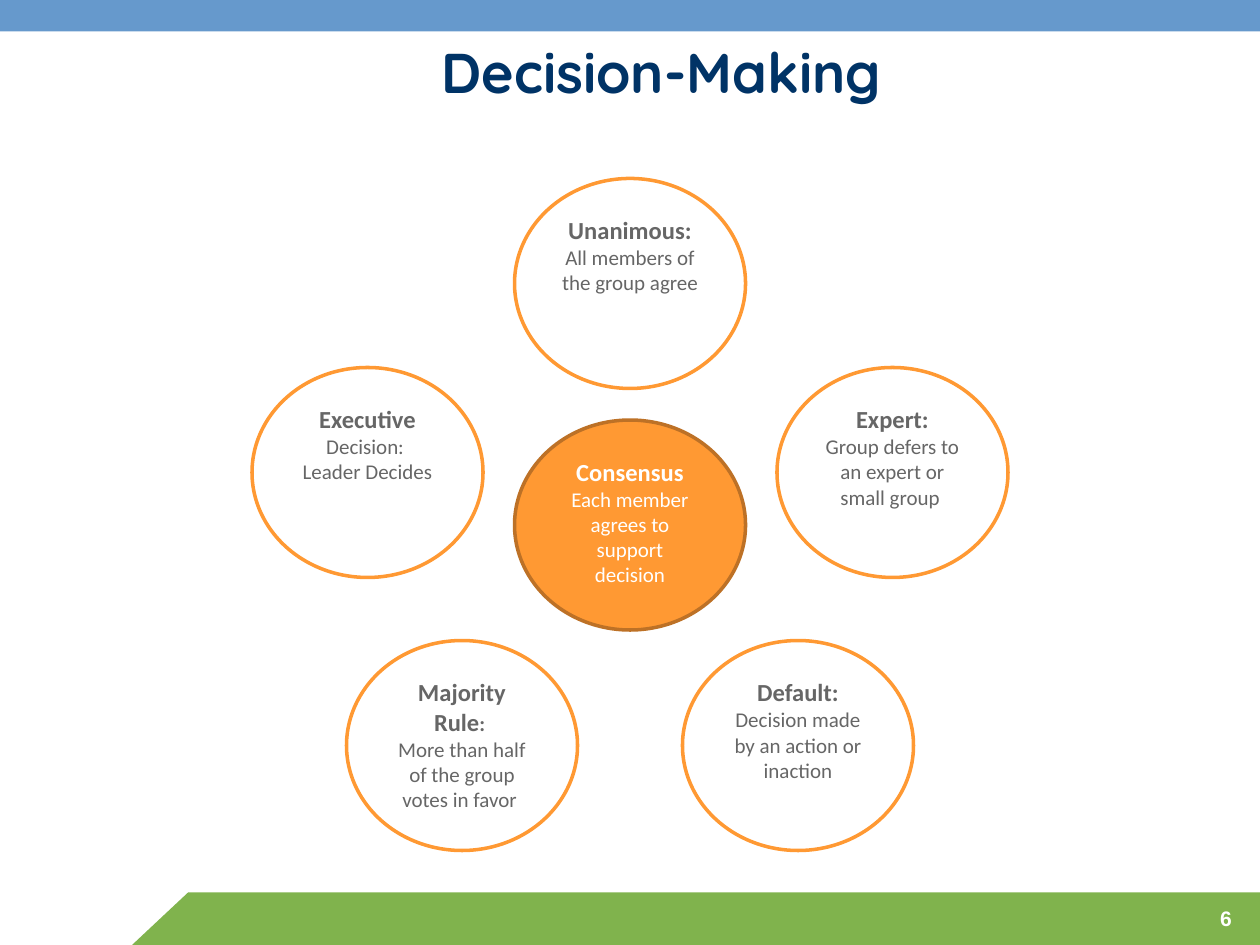
from lxml import etree
from pptx import Presentation
from pptx import util as u
from pptx.dml.color import RGBColor
from pptx.enum import shapes, text
from pptx.oxml import ns

WIDTH, HEIGHT = 720, 540
GREEN, BLUE, NAVY = "80B34D", "6699CC", "003366"
ORANGE, BROWN, GRAY, WHITE = "FF9933", "BD7126", "666666", "FFFFFF"
CENTER, RIGHT = text.PP_ALIGN.CENTER, text.PP_ALIGN.RIGHT
OVAL_W, OVAL_H = 132, 120

# Left, top, then paragraphs of (text, size, bold) runs
CHOICES = [
    (294, 102, [[("Unanimous:", 14, True)],
                [("All members of the group agree ", 12, False)]]),
    (144, 210, [[("Executive", 14, True), (" ", 12, True), ("Decision: ", 12, False)],
                [("Leader Decides", 12, False)]]),
    (390, 366, [[("Default:", 14, True)],
                [("Decision made by an action or inaction", 12, False)]]),
    (198, 366, [[("Majority Rule", 14, True), (": ", 12, True)],
                [("More than half of the group votes in favor ", 12, False)]]),
    (444, 210, [[("Expert:", 14, True)],
                [("Group defers to an expert or small group ", 12, False)]]),
]
CONSENSUS = [[("Consensus", 14, True)],
             [("Each member agrees to support decision", 12, False)]]


def rgb(value):
    return RGBColor.from_string(value)


class Deck:
    font = "Calibri"
    line_width = 2

    def __init__(self, s):
        self.s = s

    def shape(self, kind, box, fill, line=None):
        sp = self.s.shapes.add_shape(kind, *map(u.Pt, box))
        sp.shadow.inherit = False
        sp.fill.solid()
        sp.fill.fore_color.rgb = rgb(fill)
        if line:
            sp.line.color.rgb = rgb(line)
            sp.line.width = u.Pt(self.line_width)
        else:
            sp.line.fill.background()
        return sp

    def style(self, r, size, bold, color, font):
        r.font.size = u.Pt(size)
        r.font.bold = bold
        r.font.name = font
        r.font.color.rgb = rgb(color)

    def oval(self, left, top, paragraphs, fill=WHITE, line=ORANGE, color=GRAY):
        sp = self.shape(shapes.MSO_SHAPE.OVAL, (left, top, OVAL_W, OVAL_H), fill, line)
        tf = sp.text_frame
        tf.word_wrap = True
        tf.vertical_anchor = text.MSO_ANCHOR.TOP
        tf.text = "\n".join("" for _ in paragraphs)
        for p, runs in zip(tf.paragraphs, paragraphs):
            p.alignment = CENTER
            for words, size, bold in runs:
                r = p.add_run()
                r.text = words
                self.style(r, size, bold, color, self.font)

    def label(self, box, words, size, color, font, align):
        """Add a bold one-line text box and return its paragraph."""
        tf = self.s.shapes.add_textbox(*map(u.Pt, box)).text_frame
        tf.word_wrap = True
        tf.text = words
        p = tf.paragraphs[0]
        p.alignment = align
        self.style(p.runs[0], size, True, color, font)
        return p

    def title(self, words):
        p = self.label((0, 18, WIDTH, 46), words, 32, NAVY, "Quicksand", CENTER)
        pPr = p._p.get_or_add_pPr()
        pPr.set("marL", str(u.Pt(36)))
        pPr.set("indent", "0")
        ln = etree.Element(ns.qn("a:ln"), w=str(u.Pt(1)))
        fill = etree.SubElement(ln, ns.qn("a:solidFill"))
        etree.SubElement(fill, ns.qn("a:srgbClr"), val=NAVY)
        p.runs[0].font._element.insert(0, ln)

    def bands(self):
        top, slant, left = 510, 32, 75.5
        edge = left + slant
        rect = shapes.MSO_SHAPE.RECTANGLE
        self.shape(rect, (edge, top, WIDTH - edge, HEIGHT - top), GREEN)
        corner = self.shape(shapes.MSO_SHAPE.RIGHT_TRIANGLE,
                            (left, top, slant, HEIGHT - top), GREEN)
        corner._element.spPr.xfrm.set("flipH", "1")
        self.shape(rect, (0, 0, WIDTH, 18), BLUE)


def main():
    prs = Presentation()
    prs.slide_width, prs.slide_height = u.Pt(WIDTH), u.Pt(HEIGHT)
    deck = Deck(prs.slides.add_slide(prs.slide_layouts[6]))
    deck.bands()
    deck.label((633, 514, 78, 18), "6", 12, WHITE, "Arial", RIGHT)
    deck.title("Decision-Making")
    for left, top, paragraphs in CHOICES:
        deck.oval(left, top, paragraphs)
    deck.oval(294, 240, CONSENSUS, ORANGE, BROWN, WHITE)
    prs.save("out.pptx")


if __name__ == "__main__":
    main()
